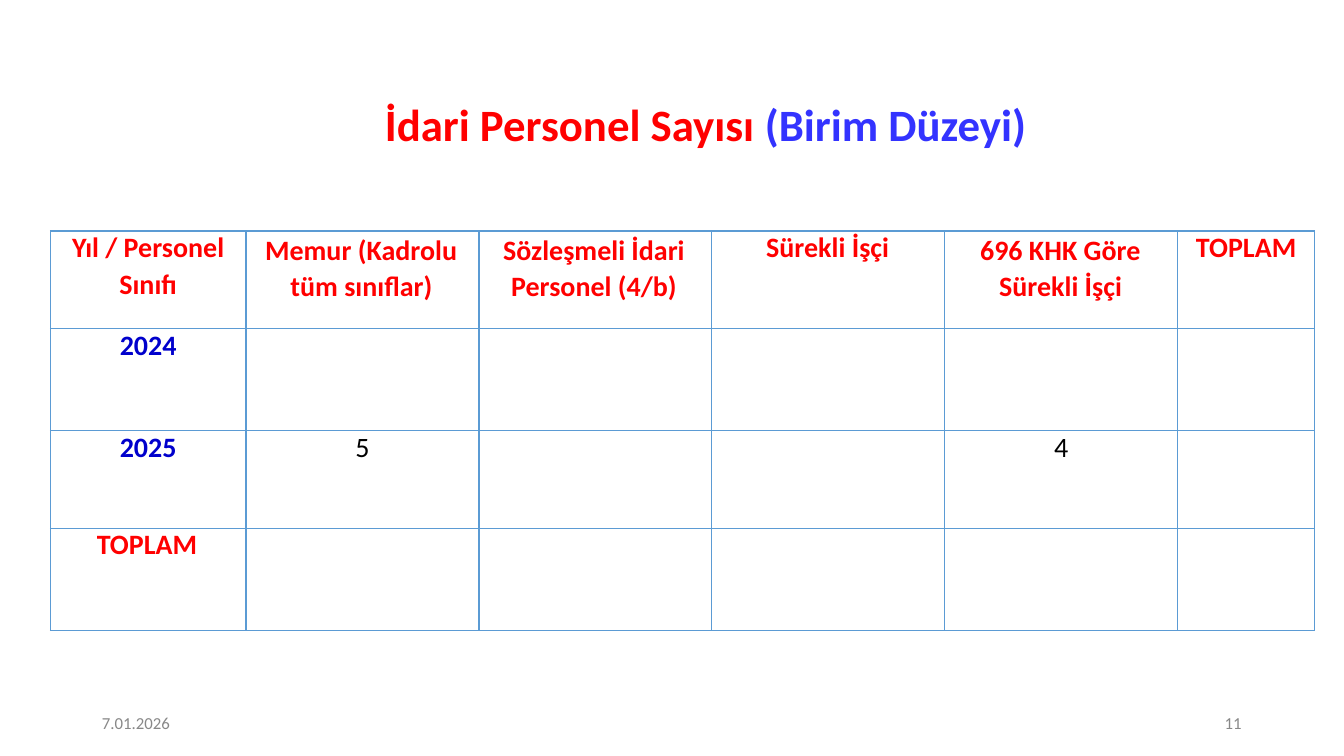
from lxml.etree import SubElement
from pptx import Presentation
from pptx.dml.color import RGBColor
from pptx.enum.text import MSO_ANCHOR, MSO_AUTO_SIZE, PP_ALIGN
from pptx.oxml.ns import qn
from pptx.util import Cm, Pt

RED = RGBColor(0xFF, 0x00, 0x00)
BLUE = RGBColor(0x33, 0x33, 0xFF)
NAVY = RGBColor(0x00, 0x00, 0xCC)
BLACK = RGBColor(0x00, 0x00, 0x00)
GREY = RGBColor(0x88, 0x88, 0x88)
BORDER = RGBColor(0x5B, 0x9B, 0xD4)

COLUMN_WIDTHS = [4.93] + [5.87] * 4 + [3.45]
ROW_HEIGHTS = [2.46, 2.57] * 2

HEADINGS = [
    ("Yıl / Personel", {}),
    ("Memur (Kadrolu tüm sınıflar)", {"left": 1.12, "first": -0.64, "spacing": 1.07}),
    ("Sözleşmeli İdari Personel (4/b)", {"left": 0.81, "first": -0.2, "spacing": 1.07}),
    ("Sürekli İşçi", {"left": 1.37}),
    ("696 KHK Göre Sürekli İşçi", {"left": 1.37, "first": -0.48, "spacing": 1.07}),
    ("TOPLAM", {"left": 0.46}),
]


def set_margins(holder, top=0):
    margins = {"margin_left": 0, "margin_top": top, "margin_right": 0, "margin_bottom": 0}
    for name, value in margins.items():
        setattr(holder, name, value)


def add_run(paragraph, words, size, color, bold=False):
    run = paragraph.add_run()
    run.text = words
    run.font.color.rgb = color
    for name, value in {"name": "Calibri", "size": Pt(size), "bold": bold}.items():
        setattr(run.font, name, value)


def indent(paragraph, left, first=0):
    properties = paragraph._p.get_or_add_pPr()
    properties.set("marL", str(Cm(left)))
    properties.set("indent", str(Cm(first)))
    paragraph.alignment = PP_ALIGN.LEFT


def draw_borders(cell):
    properties = cell._tc.get_or_add_tcPr()
    for position, side in enumerate(("a:lnL", "a:lnR", "a:lnT", "a:lnB")):
        line = SubElement(properties, qn(side), w=str(Pt(1)))
        fill = SubElement(line, qn("a:solidFill"))
        SubElement(fill, qn("a:srgbClr"), val=str(BORDER))
        properties.insert(position, line)


def write_cell(cell, words, color=RED, bold=True, left=None, first=0, spacing=None):
    paragraph = cell.text_frame.paragraphs[0]
    paragraph.alignment = PP_ALIGN.CENTER
    if left is not None:
        indent(paragraph, left, first)
    if spacing:
        paragraph.line_spacing = spacing
    add_run(paragraph, words, 20, color, bold)


def add_title(slide):
    title = slide.shapes.title
    place = {"left": Cm(3.91), "top": Cm(2.11), "width": Cm(26.06), "height": Cm(1.91)}
    for name, value in place.items():
        setattr(title, name, value)
    frame = title.text_frame
    set_margins(frame, Cm(0.33))
    frame.vertical_anchor = MSO_ANCHOR.TOP
    frame.auto_size = MSO_AUTO_SIZE.NONE
    heading = frame.paragraphs[0]
    indent(heading, 5.79)
    add_run(heading, "İdari Personel Sayısı ", 32, RED, True)
    add_run(heading, "(Birim Düzeyi)", 32, BLUE, True)


def add_footer(slide, words, left, width, inset):
    frame = slide.shapes.add_textbox(Cm(left), Cm(17.96), Cm(width), Cm(0.51)).text_frame
    set_margins(frame)
    frame.word_wrap = True
    indent(frame.paragraphs[0], inset)
    add_run(frame.paragraphs[0], words, 12, GREY)


def add_staff_table(slide):
    staff = slide.shapes.add_table(
        len(ROW_HEIGHTS), len(COLUMN_WIDTHS), Cm(1.27), Cm(5.82),
        Cm(sum(COLUMN_WIDTHS)), Cm(sum(ROW_HEIGHTS))).table
    staff.first_row = False
    staff.horz_banding = False
    for column, width in zip(staff.columns, COLUMN_WIDTHS):
        column.width = Cm(width)
    for row, height in zip(staff.rows, ROW_HEIGHTS):
        row.height = Cm(height)
    for cell in staff.iter_cells():
        set_margins(cell)
        cell.fill.background()
        draw_borders(cell)

    for column, (words, layout) in enumerate(HEADINGS):
        write_cell(staff.cell(0, column), words, **layout)
    second_line = staff.cell(0, 0).text_frame.add_paragraph()
    second_line.alignment = PP_ALIGN.CENTER
    second_line.space_before = Pt(1.6)
    add_run(second_line, "Sınıfı", 20, RED, True)

    write_cell(staff.cell(1, 0), "2024", NAVY)
    write_cell(staff.cell(2, 0), "2025", NAVY)
    write_cell(staff.cell(3, 0), "TOPLAM", left=1.17)
    write_cell(staff.cell(2, 1), "5", BLACK, False)
    write_cell(staff.cell(2, 4), "4", BLACK, False)


def main():
    deck = Presentation()
    deck.slide_width = Cm(33.87)
    deck.slide_height = Cm(19.05)
    slide = deck.slides.add_slide(deck.slide_layouts.get_by_name("Title Only"))
    add_title(slide)
    add_footer(slide, "7.01.2026", 2.54, 1.8, 0.03)
    add_footer(slide, "11", 30.78, 0.58, 0.08)
    add_staff_table(slide)
    deck.save("out.pptx")


if __name__ == "__main__":
    main()
